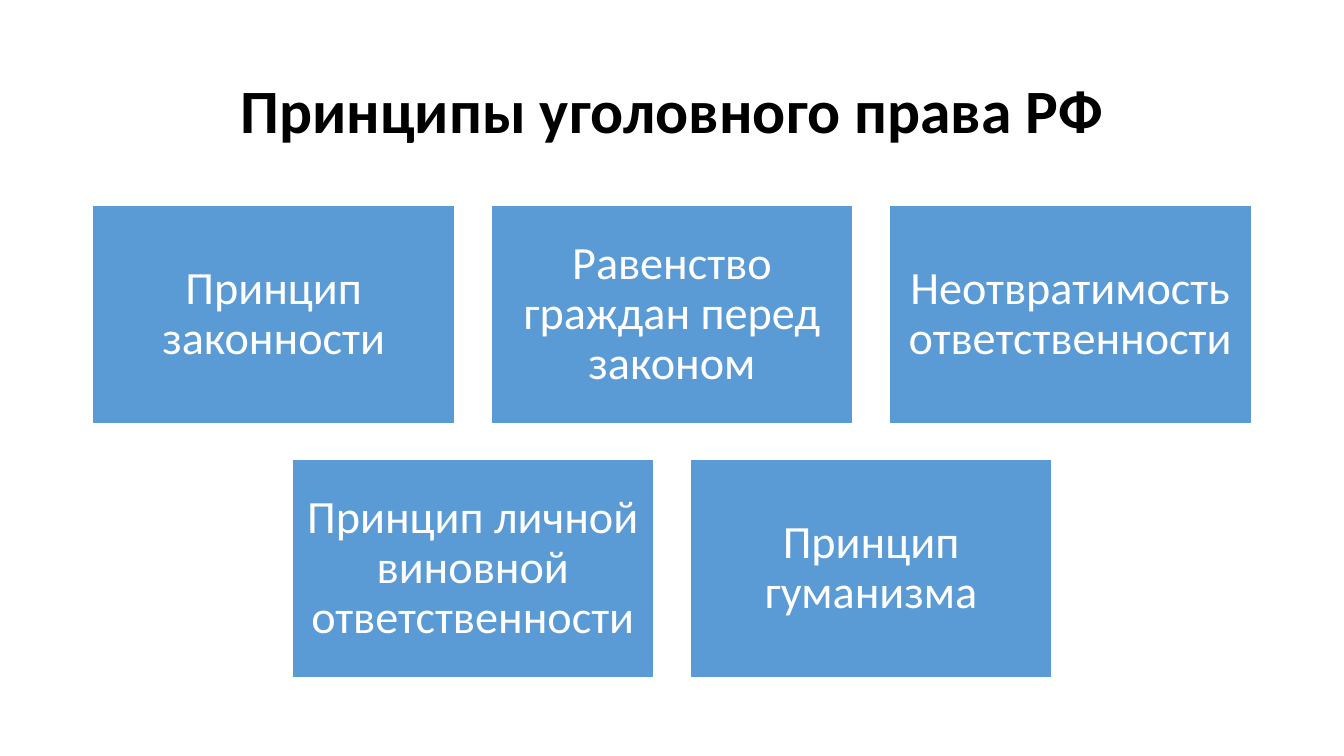
from pptx import Presentation
from pptx.dml.color import RGBColor
from pptx.enum.shapes import MSO_SHAPE
from pptx.enum.text import MSO_ANCHOR, PP_ALIGN
from pptx.util import Inches, Pt

BLACK = RGBColor(0x00, 0x00, 0x00)
WHITE = RGBColor(0xFF, 0xFF, 0xFF)
BLUE = RGBColor(0x5B, 0x9B, 0xD5)

WIDTH, HEIGHT = 13.33, 7.5
CARD_W, CARD_H, GAP = 3.59, 2.16, 0.36
TOP = 2.04

ROWS = [
    ["Принцип законности", "Равенство граждан перед законом",
     "Неотвратимость ответственности"],
    ["Принцип личной виновной ответственности", "Принцип гуманизма"],
]


class Deck:
    """Holds the style and the current slide, and draws its elements."""

    font = "Calibri"

    def __init__(self, slide):
        self.slide = slide

    def label(self, shape, text, size, color, inset, bold=False):
        frame = shape.text_frame
        frame.word_wrap = True
        frame.vertical_anchor = MSO_ANCHOR.MIDDLE
        frame.margin_left = frame.margin_right = Inches(inset)
        frame.margin_top = frame.margin_bottom = Inches(inset)
        para = frame.paragraphs[0]
        para.alignment = PP_ALIGN.CENTER
        para.line_spacing = 0.9
        run = para.add_run()
        run.text = text
        run.font.name = self.font
        run.font.size = Pt(size)
        run.font.bold = bold
        run.font.color.rgb = color

    def title(self, text):
        box = self.slide.shapes.add_textbox(
            Inches(0.92), Inches(0.4), Inches(11.5), Inches(1.45))
        self.label(box, text, 44, BLACK, 0.1, bold=True)

    def card(self, left, top, text):
        card = self.slide.shapes.add_shape(
            MSO_SHAPE.RECTANGLE, Inches(left), Inches(top),
            Inches(CARD_W), Inches(CARD_H))
        card.shadow.inherit = False
        card.fill.solid()
        card.fill.fore_color.rgb = BLUE
        card.line.color.rgb = WHITE
        card.line.width = Pt(1)
        self.label(card, text, 33, WHITE, 0.14)

    def row(self, index, texts):
        span = len(texts) * (CARD_W + GAP) - GAP
        left = (WIDTH - span) / 2
        top = TOP + index * (CARD_H + GAP)
        for col, text in enumerate(texts):
            self.card(left + col * (CARD_W + GAP), top, text)


def main():
    show = Presentation()
    show.slide_width = Inches(WIDTH)
    show.slide_height = Inches(HEIGHT)
    deck = Deck(show.slides.add_slide(show.slide_layouts[6]))
    deck.title("Принципы уголовного права РФ")
    for index, texts in enumerate(ROWS):
        deck.row(index, texts)
    show.save("out.pptx")


if __name__ == "__main__":
    main()
